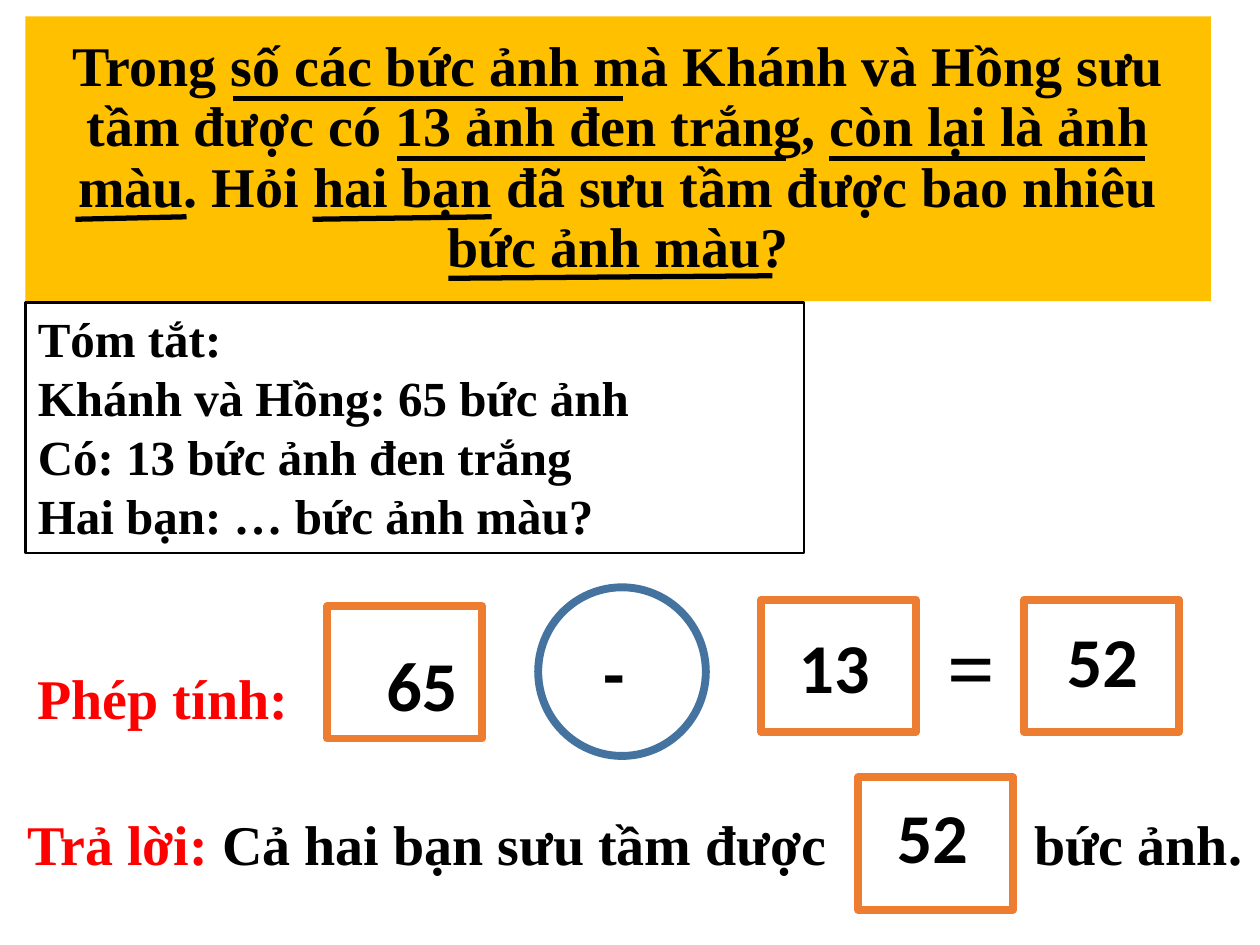
from lxml.etree import SubElement
from pptx import Presentation
from pptx.dml.color import RGBColor
from pptx.enum.shapes import MSO_CONNECTOR, MSO_SHAPE
from pptx.enum.text import MSO_ANCHOR, MSO_AUTO_SIZE, PP_ALIGN
from pptx.oxml.ns import qn
from pptx.util import Cm, Pt

COLORS = {
    "banner": "FFC000",
    "text": "000000",
    "label": "FF0000",
    "box": "ED7D31",
    "circle": "43739E",
}


class ExerciseSlide:
    serif = "Times New Roman"
    sans = "Calibri"

    def __init__(self, presentation):
        self.slide = presentation.slides.add_slide(presentation.slide_layouts[1])

    def color(self, name):
        return RGBColor.from_string(COLORS[name])

    def place(self, shape, left, top, width, height):
        shape.left, shape.top = Cm(left), Cm(top)
        shape.width, shape.height = Cm(width), Cm(height)

    def format_font(self, font, size, name, color="text"):
        font.size, font.name, font.bold = Pt(size), name, True
        font.color.rgb = self.color(color)

    def outline(self, shape, color, width):
        shape.line.color.rgb = self.color(color)
        shape.line.width = Pt(width)

    def title(self, text, *area):
        shape = self.slide.shapes.title
        self.place(shape, *area)
        shape.fill.solid()
        shape.fill.fore_color.rgb = self.color("banner")
        text_frame = shape.text_frame
        text_frame.text = text
        text_frame.auto_size = MSO_AUTO_SIZE.NONE
        text_frame.vertical_anchor = MSO_ANCHOR.MIDDLE
        paragraph = text_frame.paragraphs[0]
        paragraph.alignment = PP_ALIGN.CENTER
        paragraph.line_spacing = 0.9
        self.format_font(paragraph.runs[0].font, 32, self.serif)

    def summary(self, lines, *area):
        shape = self.slide.placeholders[1]
        self.place(shape, *area)
        self.outline(shape, "text", 1.5)
        text_frame = shape.text_frame
        text_frame.text = "\n".join(lines)
        text_frame.auto_size = MSO_AUTO_SIZE.NONE
        for paragraph in text_frame.paragraphs:
            properties = paragraph._p.get_or_add_pPr()
            properties.set("marL", "0")
            properties.set("indent", "0")
            SubElement(properties, qn("a:buNone"))
            paragraph.space_before = Pt(0)
            self.format_font(paragraph.runs[0].font, 28, self.serif)

    def text(self, parts, size, name, *area, tab=None):
        shape = self.slide.shapes.add_textbox(*map(Cm, area))
        text_frame = shape.text_frame
        text_frame.word_wrap = True
        text_frame.margin_right = 0
        paragraph = text_frame.paragraphs[0]
        if tab:
            tabs = SubElement(paragraph._p.get_or_add_pPr(), qn("a:tabLst"))
            SubElement(tabs, qn("a:tab"), pos=str(Cm(tab)), algn="l")
        for content, color in parts:
            run = paragraph.add_run()
            run.text = content
            self.format_font(run.font, size, name, color)

    def number(self, content, left, top, width=2.34):
        self.text([(content, "text")], 40, self.sans, left, top, width, 1.96)

    def frame(self, kind, color, *area):
        shape = self.slide.shapes.add_shape(kind, *map(Cm, area))
        shape.shadow.inherit = False
        shape.fill.background()
        self.outline(shape, color, 4.5)

    def underline(self, *ends):
        connector = self.slide.shapes.add_connector(
            MSO_CONNECTOR.STRAIGHT, *map(Cm, ends)
        )
        self.outline(connector, "text", 3)
        SubElement(connector._element.spPr, qn("a:effectLst"))


def main():
    presentation = Presentation()
    presentation.slide_width, presentation.slide_height = Cm(25.4), Cm(19.05)
    exercise = ExerciseSlide(presentation)

    exercise.title(
        "Trong số các bức ảnh mà Khánh và Hồng sưu tầm được có 13 ảnh đen trắng, "
        "còn lại là ảnh màu. Hỏi hai bạn đã sưu tầm được bao nhiêu bức ảnh màu?",
        0.51, 0.33, 23.9, 5.74,
    )
    exercise.summary(
        [
            "Tóm tắt:",
            "Khánh và Hồng: 65 bức ảnh",
            "Có: 13 bức ảnh đen trắng",
            "Hai bạn: … bức ảnh màu?",
        ],
        0.51, 6.1, 15.7, 5.05,
    )

    serif = exercise.serif
    exercise.text([("Phép tính:", "label")], 32, serif, 0.51, 13.26, 6, 1.63)
    exercise.text([("=", "text")], 48, serif, 18.85, 12.27, 1.7, 2.31)
    exercise.text(
        [("Trả lời: ", "label"), ("Cả hai bạn sưu tầm được\tbức ảnh.", "text")],
        32, serif, 0.3, 16.2, 25.1, 1.63, tab=20.3,
    )

    for left, top in [(6.6, 12.22), (15.34, 12.09), (20.65, 12.09), (17.3, 15.67)]:
        exercise.frame(MSO_SHAPE.RECTANGLE, "box", left, top, 3.12, 2.67)
    exercise.frame(MSO_SHAPE.OVAL, "circle", 10.85, 11.84, 3.38, 3.4)

    exercise.number("65", 7.54, 12.8)
    exercise.number("-", 11.91, 12.57, 1.2)
    exercise.number("13", 15.85, 12.45)
    exercise.number("52", 21.26, 12.32)
    exercise.number("52", 17.83, 15.88)

    for ends in [
        (4.7, 1.98, 12.55, 1.98),
        (8, 3.2, 15.85, 3.2),
        (16.71, 3.2, 23.09, 3.2),
        (1.52, 4.42, 3.76, 4.37),
        (6.3, 4.42, 9.91, 4.37),
        (9.04, 5.61, 15.57, 5.56),
    ]:
        exercise.underline(*ends)

    presentation.save("out.pptx")


if __name__ == "__main__":
    main()
